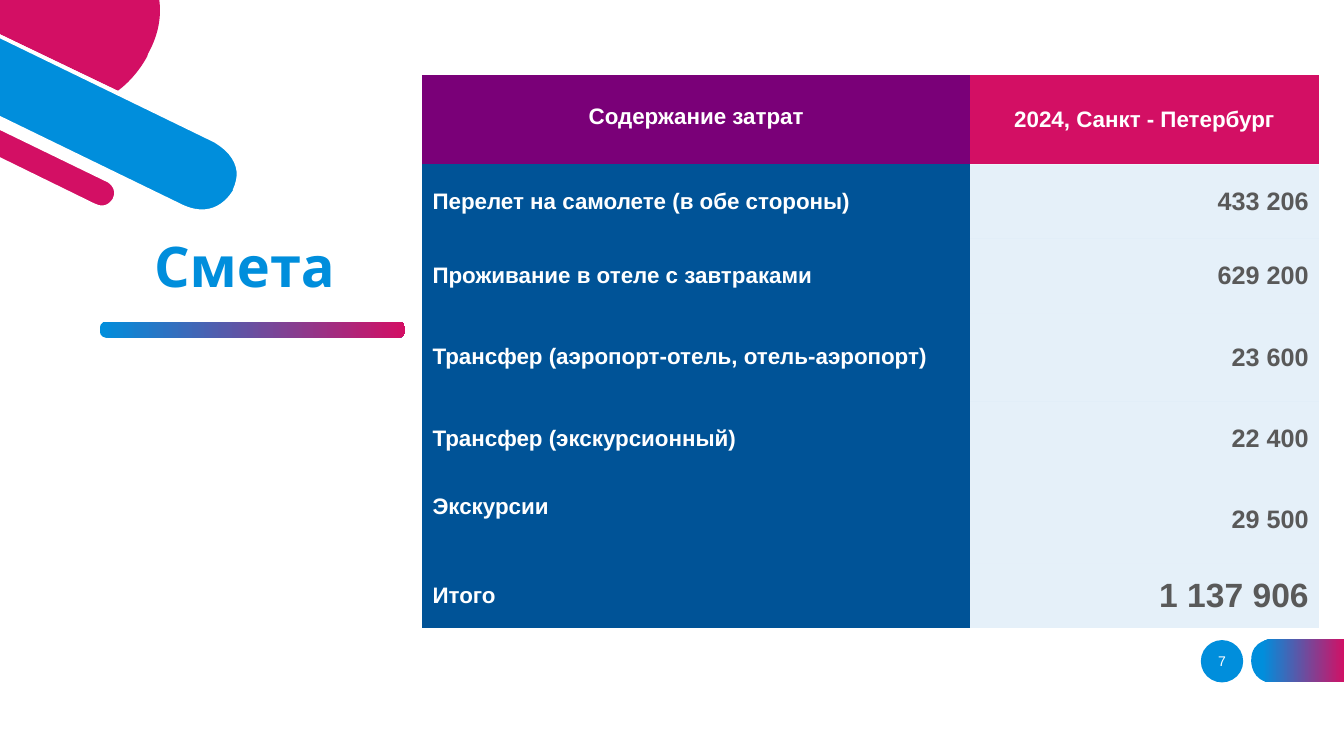
from dataclasses import dataclass

from lxml.etree import SubElement
from pptx import Presentation
from pptx.dml.color import RGBColor
from pptx.enum.shapes import MSO_SHAPE
from pptx.enum.text import MSO_ANCHOR, PP_ALIGN
from pptx.oxml.ns import qn
from pptx.util import Cm, Pt

BLUE, PINK, WHITE = "008EDC", "D30F64", "FFFFFF"
PURPLE, NAVY, PALE, GREY = "7A0078", "005397", "006FC9", "595959"
NO_STYLE = "{2D5ABB26-0587-4C30-8999-92F81FD0307C}"


@dataclass
class Ribbon:
    fill: str
    outline: str


@dataclass
class Expense:
    name: str
    amount: str
    height: float
    size: int = 18
    lift: float = 0


RIBBONS = [
    Ribbon(WHITE, "M 0.01 0.81 L 0.28 0.94 C 0.6 1.1 0.89 1.08 1.15 0.89 C 1.34 0.74 1.44 0.55 1.44 0.55 "
                  "L 1.46 0.52 C 1.55 0.34 1.58 0.16 1.56 0 L 1.6 0 C 1.62 0.17 1.59 0.35 1.49 0.54 "
                  "L 1.48 0.57 C 1.47 0.58 1.37 0.77 1.17 0.92 C 1.06 1.01 0.9 1.09 0.69 1.09 "
                  "C 0.56 1.09 0.42 1.06 0.26 0.98 L 0.01 0.86"),
    Ribbon(BLUE, "M 2.12 1.39 C 2.12 1.39 2.49 1.57 2.33 1.89 L 2.32 1.9 C 2.32 1.9 2.16 2.22 1.8 2.04 "
                 "L 0 1.17 L 0 0.36"),
    Ribbon(PINK, "M 1.46 0.56 C 1.46 0.56 1.36 0.76 1.17 0.9 L 0 0.34 L 0 0 L 1.58 0 "
                 "C 1.6 0.15 1.58 0.33 1.47 0.53"),
    Ribbon(PINK, "M 0 1.26 L 1.06 1.78 C 1.06 1.78 1.2 1.85 1.14 1.97 L 1.14 1.98 "
                 "C 1.14 1.98 1.07 2.11 0.93 2.04 L 0 1.58"),
    Ribbon(WHITE, "M 0.94 2.02 C 1.06 2.08 1.11 1.98 1.12 1.97 C 1.17 1.86 1.06 1.8 1.05 1.8 L 0 1.29 "
                  "L 0 1.24 L 1.07 1.76 C 1.07 1.76 1.15 1.8 1.17 1.87 C 1.18 1.91 1.18 1.95 1.16 1.99 "
                  "C 1.14 2.03 1.09 2.08 1.01 2.08 C 0.99 2.08 0.96 2.08 0.93 2.06 L 0 1.61 L 0 1.56"),
    Ribbon(WHITE, "M 1.81 2.03 C 2.15 2.19 2.3 1.9 2.31 1.89 L 2.31 1.88 C 2.37 1.75 2.36 1.64 2.27 1.53 "
                  "C 2.21 1.46 2.12 1.41 2.12 1.41 L 0 0.38 L 0 0.34 L 2.14 1.37 "
                  "C 2.14 1.38 2.32 1.46 2.37 1.63 C 2.4 1.71 2.39 1.8 2.35 1.9 L 2.34 1.91 "
                  "C 2.34 1.91 2.23 2.12 2.01 2.12 C 1.94 2.12 1.87 2.1 1.79 2.06 L 0 1.19 L 0 1.15"),
]
CORNER_TAB = ("M 12.62 6.77 L 13.34 6.77 L 13.34 6.34 L 12.62 6.34 C 12.62 6.34 12.41 6.34 12.41 6.55 "
              "L 12.41 6.56 C 12.41 6.56 12.41 6.77 12.62 6.77")
EXPENSES = [
    Expense("Перелет на самолете (в обе стороны)", "433 206", 0.74),
    Expense("Проживание в отеле с завтраками", "629 200", 0.74),
    Expense("Трансфер (аэропорт-отель, отель-аэропорт)", "23 600", 0.87),
    Expense("Трансфер (экскурсионный)", "22 400", 0.74),
    Expense("Экскурсии", "29 500", 0.87, lift=0.25),
    Expense("Итого", "1 137 906", 0.64, size=24),
]


def inch(value: float) -> Cm:
    return Cm(value * 2.54)


def paint(fill, color: str) -> None:
    fill.solid()
    fill.fore_color.rgb = RGBColor.from_string(color)


def paint_gradient(fill, start: float = 0) -> None:
    fill.gradient()
    fill.gradient_angle = 0
    for stop, color, position in zip(fill.gradient_stops, (BLUE, PINK), (start, 1)):
        stop.color.rgb = RGBColor.from_string(color)
        stop.position = position


def trace(outline: str) -> list[list[tuple[int, int]]]:
    tokens = iter(outline.split())
    return [[(inch(float(next(tokens))), inch(float(next(tokens))))
             for _ in range(3 if command == "C" else 1)] for command in tokens]


def strip(sp):
    sp.shadow.inherit = False
    sp.line.fill.background()
    return sp


def add_outline(s, outline: str):
    (start,), *segments = trace(outline)
    builder = s.shapes.build_freeform(*start)
    builder.add_line_segments([knots[-1] for knots in segments], close=True)
    sp = strip(builder.convert_to_shape())
    for line, knots in zip(list(sp._element.iter(qn("a:lnTo"))), segments):
        if len(knots) == 1:
            continue
        curve = line.makeelement(qn("a:cubicBezTo"))
        line.getparent().replace(line, curve)
        for x, y in knots:
            point = SubElement(curve, qn("a:pt"))
            point.set("x", str(x - sp.left))
            point.set("y", str(y - sp.top))
    return sp


def add_preset(s, kind, left: float, top: float, width: float, height: float):
    return strip(s.shapes.add_shape(kind, inch(left), inch(top), inch(width), inch(height)))


def write(tf, text: str, *, size: float, color: str = WHITE, font: str = "Arial", bold: bool = True,
          align=PP_ALIGN.LEFT, spacing: float = 1.0) -> None:
    p = tf.paragraphs[0]
    p.alignment = align
    p.line_spacing = spacing
    r = p.add_run()
    r.text = text
    r.font.size = Pt(size)
    r.font.name = font
    r.font.bold = bold
    paint(r.font.fill, color)


def add_text(s, text: str, left: float, top: float, width: float, height: float, anchor, **fmt) -> None:
    tf = s.shapes.add_textbox(inch(left), inch(top), inch(width), inch(height)).text_frame
    tf.word_wrap = True
    tf.vertical_anchor = anchor
    write(tf, text, **fmt)


def fill_cell(cell, text: str, fill: str, *, lift: float = 0, opacity: int = 100, **fmt) -> None:
    cell.vertical_anchor = MSO_ANCHOR.MIDDLE
    cell.margin_bottom = inch(0.05 + lift)
    paint(cell.fill, fill)
    if opacity < 100:
        color = cell._tc.tcPr.find(f".//{qn('a:srgbClr')}")
        SubElement(color, qn("a:alpha")).set("val", str(opacity * 1000))
    write(cell.text_frame, text, **fmt)


def add_budget(s) -> None:
    heights = [0.89] + [expense.height for expense in EXPENSES]
    widths = [5.43, 3.46]
    table = s.shapes.add_table(len(heights), len(widths), inch(4.19), inch(0.74),
                               inch(sum(widths)), inch(sum(heights))).table
    table.first_row = table.horz_banding = False
    table._tbl.tblPr.find(qn("a:tableStyleId")).text = NO_STYLE
    for column, width in zip(table.columns, widths):
        column.width = inch(width)
    for row, height in zip(table.rows, heights):
        row.height = inch(height)
    fill_cell(table.cell(0, 0), "Содержание затрат", PURPLE, lift=0.05, size=16, align=PP_ALIGN.CENTER)
    fill_cell(table.cell(0, 1), "2024, Санкт - Петербург", PINK, size=16, align=PP_ALIGN.CENTER)
    for i, expense in enumerate(EXPENSES, 1):
        fill_cell(table.cell(i, 0), expense.name, NAVY, lift=expense.lift, size=16)
        fill_cell(table.cell(i, 1), expense.amount, PALE, opacity=10, size=expense.size,
                  color=GREY, align=PP_ALIGN.RIGHT)


def main() -> None:
    prs = Presentation()
    prs.slide_width, prs.slide_height = inch(13.33), inch(7.5)
    s = prs.slides.add_slide(prs.slide_layouts[6])
    paint(add_preset(s, MSO_SHAPE.OVAL, 11.91, 6.35, 0.42, 0.42).fill, BLUE)
    paint_gradient(add_outline(s, CORNER_TAB).fill, 0.12)
    for ribbon in RIBBONS:
        paint(add_outline(s, ribbon.outline).fill, ribbon.fill)
    bar = add_preset(s, MSO_SHAPE.ROUNDED_RECTANGLE, 0.99, 3.19, 3.03, 0.16)
    bar.adjustments[0] = 0.4
    paint_gradient(bar.fill)
    add_text(s, "Смета", 1.43, 2.28, 3.72, 0.74, MSO_ANCHOR.BOTTOM,
             size=40, color=BLUE, font="Quicksand", spacing=0.9)
    add_budget(s)
    add_text(s, "7", 11.82, 6.36, 0.6, 0.4, MSO_ANCHOR.MIDDLE,
             size=10, bold=False, align=PP_ALIGN.CENTER)
    prs.save("out.pptx")


if __name__ == "__main__":
    main()
